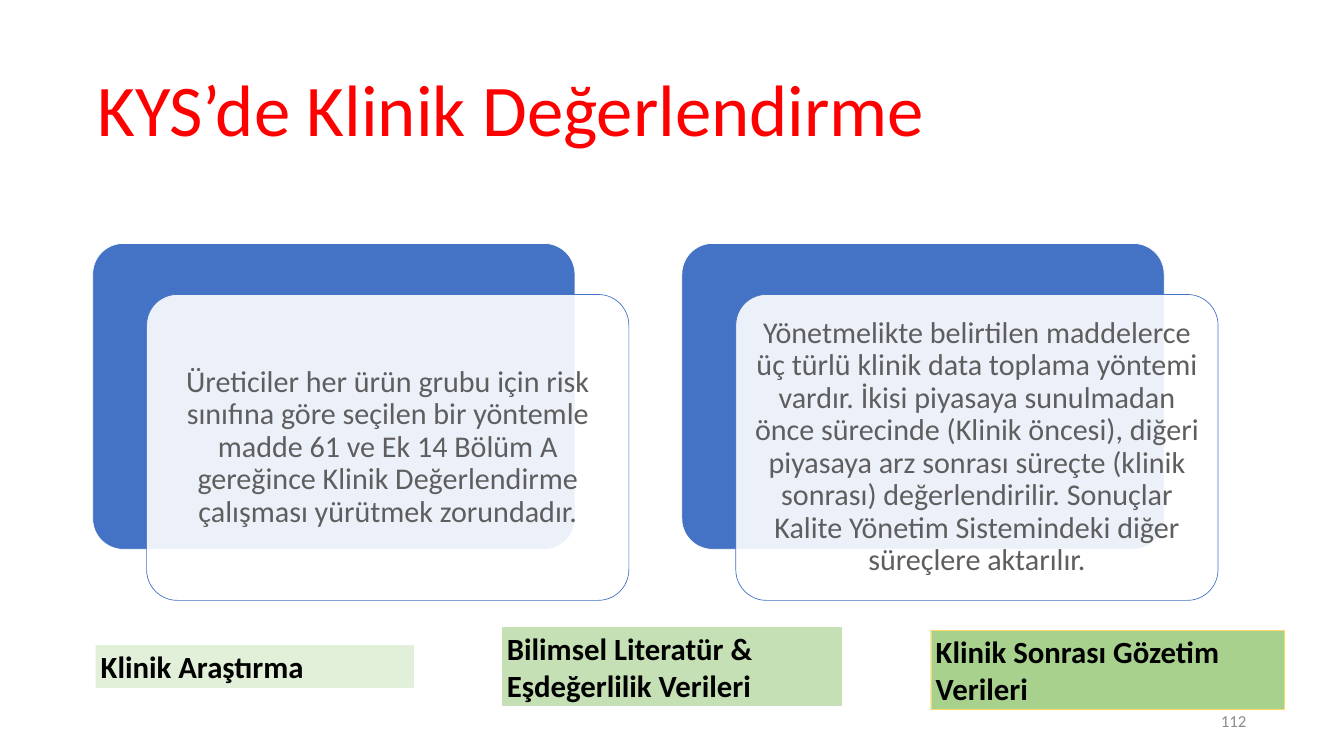
from lxml import etree
from pptx import Presentation
from pptx.dml.color import RGBColor
from pptx.enum import shapes, text
from pptx.oxml import ns
from pptx.util import Pt

TITLE = "KYS’de Klinik Değerlendirme"
CARDS = [
    "Üreticiler her ürün grubu için risk sınıfına göre seçilen bir yöntemle "
    "madde 61 ve Ek 14 Bölüm A gereğince Klinik Değerlendirme çalışması "
    "yürütmek zorundadır.",
    "Yönetmelikte belirtilen maddelerce üç türlü klinik data toplama yöntemi "
    "vardır. İkisi piyasaya sunulmadan önce sürecinde (Klinik öncesi), diğeri "
    "piyasaya arz sonrası süreçte (klinik sonrası) değerlendirilir. Sonuçlar "
    "Kalite Yönetim Sistemindeki diğer süreçlere aktarılır.",
]
# text, box (left, top, width, height), fill, line, line width
LABELS = [
    ("Klinik Araştırma", (136.8, 921.6, 453.6, 60.5), "E2F0D9", "E2F0D9", 0.5),
    ("Bilimsel Literatür & Eşdeğerlilik Verileri",
     (717.1, 895, 486, 113.8), "C5E0B4", "FFFFFF", 1.5),
    ("Klinik Sonrası Gözetim Verileri",
     (1329.8, 900, 504.7, 113.8), "A9D18E", "FFD966", 0.5),
]
PAGE = "112"

LEFT, TOP, WIDE, HIGH = 132.5, 347.8, 689, 437
STEP = 841.8            # from one card pair to the next
SHIFT = 77, 72.9        # front card against back card
ALIGN = text.PP_ALIGN
MID = text.MSO_ANCHOR.MIDDLE
KIND = shapes.MSO_SHAPE


def color(code):
    return RGBColor.from_string(code)


def write(shape, words, size, code, align=ALIGN.LEFT, bold=False, space=1.0,
          pad=(7.2, 3.6)):
    frame = shape.text_frame
    frame.word_wrap = True
    frame.auto_size = text.MSO_AUTO_SIZE.NONE
    frame.vertical_anchor = MID
    frame.margin_left = frame.margin_right = Pt(pad[0])
    frame.margin_top = frame.margin_bottom = Pt(pad[1])
    frame.text = words
    para = frame.paragraphs[0]
    para.alignment, para.line_spacing = align, space
    font = para.runs[0].font
    font.name, font.size, font.bold = "Calibri", Pt(size), bold
    font.color.rgb = color(code)


def draw(kind, box, fill, line, width):
    shape = slide.shapes.add_shape(kind, *map(Pt, box))
    shape.shadow.inherit = False
    shape.fill.solid()
    shape.fill.fore_color.rgb = color(fill)
    shape.line.color.rgb = color(line)
    shape.line.width = Pt(width)
    if kind == KIND.ROUNDED_RECTANGLE:
        shape.adjustments[0] = 0.1
    return shape


def fade(shape, percent):
    """Set the opacity of a solid fill."""
    tone = shape.fill._xPr.find(".//" + ns.qn("a:srgbClr"))
    etree.SubElement(tone, ns.qn("a:alpha"), val=str(percent * 1000))


deck = Presentation()
deck.slide_width, deck.slide_height = Pt(1920.24), Pt(1080)
slide = deck.slides.add_slide(deck.slide_layouts[5])

title = slide.shapes.title
title.left, title.top, title.width, title.height = map(
    Pt, (131.8, 57.6, 1656, 208.8))
write(title, TITLE, 104, "FF0000", space=0.9)

for i, words in enumerate(CARDS):
    x = LEFT + i * STEP
    draw(KIND.ROUNDED_RECTANGLE, (x, TOP, WIDE, HIGH), "4472C4", "FFFFFF", 1)
    front = draw(KIND.ROUNDED_RECTANGLE,
                 (x + SHIFT[0], TOP + SHIFT[1], WIDE, HIGH),
                 "FFFFFF", "4472C4", 1)
    fade(front, 90)
    write(front, words, 43, "5E5E5E", ALIGN.CENTER, space=0.9, pad=(13, 13))

for words, box, fill, line, width in LABELS:
    label = draw(KIND.RECTANGLE, box, fill, line, width)
    write(label, words, 44, "000000", bold=True)

page = slide.shapes.add_textbox(*map(Pt, (1355.8, 1000.8, 432, 57.6)))
write(page, PAGE, 24, "8C8C8C", ALIGN.RIGHT)

deck.save("out.pptx")
